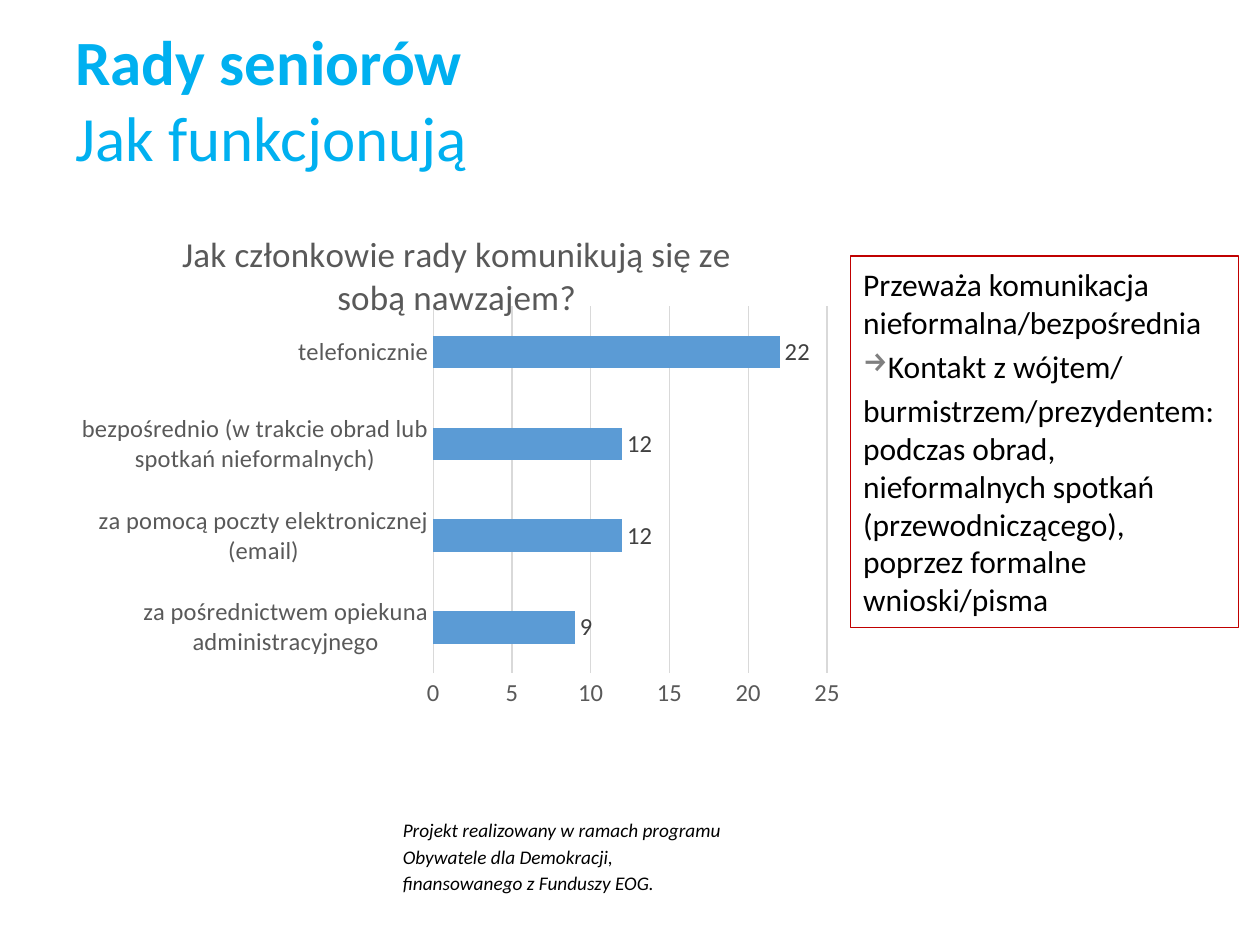
import dataclasses
import typing

import lxml.etree
import pptx
import pptx.chart.data
import pptx.dml.color
import pptx.enum.chart
import pptx.enum.shapes
import pptx.enum.text
import pptx.oxml.ns
import pptx.util

Cm = pptx.util.Cm
Pt = pptx.util.Pt
qn = pptx.oxml.ns.qn

COLORS = {
    "title": "00B0F0",
    "text": "000000",
    "frame": "C00000",
    "arrow": "7F7F7F",
    "axis": "595959",
    "label": "404040",
    "grid": "D9D9D9",
    "bar": "5B9BD5",
}


@dataclasses.dataclass
class Span:
    text: str
    size: float
    color: str = "text"
    bold: bool = False
    italic: bool = False


@dataclasses.dataclass
class Para:
    spans: list[Span]
    bullet: str = ""
    spacing: dict[str, typing.Any] = dataclasses.field(default_factory=dict)


@dataclasses.dataclass
class Panel:
    left: float
    top: float
    width: float
    height: float
    paras: list[Para]
    anchor: typing.Any = pptx.enum.text.MSO_ANCHOR.MIDDLE
    frame: str = ""

    def bounds(self) -> list[pptx.util.Length]:
        return [Cm(value) for value in (self.left, self.top, self.width, self.height)]


def rgb(name: str) -> pptx.dml.color.RGBColor:
    return pptx.dml.color.RGBColor.from_string(COLORS[name])


def assign(target: typing.Any, values: dict[str, typing.Any]) -> None:
    for name, value in values.items():
        setattr(target, name, value)


def style_font(font: typing.Any, size: float, color: str, bold: bool = False, italic: bool = False) -> None:
    assign(font, {"name": "Calibri", "size": Pt(size), "bold": bold, "italic": italic})
    font.color.rgb = rgb(color)


def style_line(line: typing.Any, color: str) -> None:
    line.color.rgb = rgb(color)
    line.width = Pt(0.75)


def add_bullet(para: typing.Any, symbol: str) -> None:
    properties = para._p.get_or_add_pPr()
    assign_indent = {"marL": "0", "indent": "0"}
    for name, value in assign_indent.items():
        properties.set(name, value)
    color = lxml.etree.SubElement(properties, qn("a:buClr"))
    lxml.etree.SubElement(color, qn("a:srgbClr"), val=COLORS["arrow"])
    lxml.etree.SubElement(properties, qn("a:buChar"), char=symbol)


def draw_panel(page: typing.Any, panel: Panel) -> None:
    if panel.frame:
        box = page.shapes.add_shape(pptx.enum.shapes.MSO_SHAPE.RECTANGLE, *panel.bounds())
        box.shadow.inherit = False
        box.fill.background()
        style_line(box.line, panel.frame)
    else:
        box = page.shapes.add_textbox(*panel.bounds())
    frame = box.text_frame
    assign(frame, {"word_wrap": True, "vertical_anchor": panel.anchor})
    for index, item in enumerate(panel.paras):
        para = frame.add_paragraph() if index else frame.paragraphs[0]
        if item.bullet:
            add_bullet(para, item.bullet)
        assign(para, {"alignment": pptx.enum.text.PP_ALIGN.LEFT, **item.spacing})
        for position, span in enumerate(item.spans):
            if position:
                para.add_line_break()
            run = para.add_run()
            run.text = span.text
            style_font(run.font, span.size, span.color, span.bold, span.italic)


def place_plot(chart: typing.Any, place: dict[str, float]) -> None:
    plot_area = chart._chartSpace.chart.plotArea
    for old in plot_area.findall(qn("c:layout")):
        plot_area.remove(old)
    layout = lxml.etree.Element(qn("c:layout"))
    manual = lxml.etree.SubElement(layout, qn("c:manualLayout"))
    settings = {"layoutTarget": "inner", "xMode": "edge", "yMode": "edge", **place}
    for name, value in settings.items():
        lxml.etree.SubElement(manual, qn(f"c:{name}"), val=str(value))
    plot_area.insert(0, layout)


def draw_chart(page: typing.Any, answers: dict[str, int]) -> None:
    data = pptx.chart.data.CategoryChartData(number_format="###0")
    data.categories = list(answers)
    data.add_series("Series 1", list(answers.values()))
    chart = page.shapes.add_chart(
        pptx.enum.chart.XL_CHART_TYPE.BAR_CLUSTERED,
        Cm(1.27), Cm(4.14), Cm(15.88), Cm(10.72), data,
    ).chart
    style_font(chart.font, 10, "text")
    assign(chart, {"has_legend": False, "has_title": True})
    chart.chart_title.include_in_layout = False
    para = chart.chart_title.text_frame.paragraphs[0]
    run = para.add_run()
    run.text = "Jak członkowie rady komunikują się ze sobą nawzajem?"
    style_font(run.font, 20, "axis")

    for axis in (chart.category_axis, chart.value_axis):
        no_tick = pptx.enum.chart.XL_TICK_MARK.NONE
        assign(axis, {"major_tick_mark": no_tick, "minor_tick_mark": no_tick})
        style_font(axis.tick_labels.font, 14, "axis")
    chart.category_axis.has_major_gridlines = False
    style_line(chart.category_axis.format.line, "grid")
    assign(chart.value_axis, {
        "minimum_scale": 0, "maximum_scale": 25, "major_unit": 5, "has_major_gridlines": True,
    })
    chart.value_axis.format.line.fill.background()
    style_line(chart.value_axis.major_gridlines.format.line, "grid")
    number_format = {"number_format": "###0", "number_format_is_linked": False}
    assign(chart.value_axis.tick_labels, number_format)

    plot = chart.plots[0]
    assign(plot, {"gap_width": 182, "vary_by_categories": False})
    bars = plot.series[0]
    bars.format.fill.solid()
    bars.format.fill.fore_color.rgb = rgb("bar")
    labels = bars.data_labels
    assign(labels, {
        **number_format,
        "show_value": True,
        "position": pptx.enum.chart.XL_LABEL_POSITION.OUTSIDE_END,
    })
    style_font(labels.font, 14, "label")
    place_plot(chart, {"x": 0.47, "y": 0.19, "w": 0.5, "h": 0.69})


def main() -> None:
    deck = pptx.Presentation()
    assign(deck, {"slide_width": Cm(25.4), "slide_height": Cm(19.05)})
    page = deck.slides.add_slide(deck.slide_layouts[6])
    gap = {"space_before": Pt(3.6)}
    funding = "Projekt realizowany w ramach programu Obywatele dla Demokracji, finansowanego z Funduszy EOG."
    contact = (
        "burmistrzem/prezydentem: podczas obrad, nieformalnych spotkań "
        "(przewodniczącego), poprzez formalne wnioski/pisma"
    )
    footer = Panel(
        7.87, 16.31, 7.06, 1.88,
        [Para([Span(funding, 11, italic=True)], spacing={"line_spacing": 1.15})],
        anchor=pptx.enum.text.MSO_ANCHOR.TOP,
    )
    title = Panel(1.27, 0.64, 20.83, 2.69, [Para([
        Span("Rady seniorów", 36, "title", bold=True),
        Span("Jak funkcjonują", 36, "title"),
    ])])
    findings = Panel(17.15, 5.16, 7.82, 7.49, [
        Para([Span("Przeważa komunikacja nieformalna/bezpośrednia", 18)]),
        Para([Span("Kontakt z wójtem/", 18)], bullet="→", spacing=gap),
        Para([Span(contact, 18)], spacing=gap),
    ], frame="frame")
    draw_panel(page, footer)
    draw_panel(page, title)
    draw_chart(page, {
        "za pośrednictwem opiekuna administracyjnego": 9,
        "za pomocą poczty elektronicznej (email)": 12,
        "bezpośrednio (w trakcie obrad lub spotkań nieformalnych)": 12,
        "telefonicznie": 22,
    })
    draw_panel(page, findings)
    deck.save("out.pptx")


if __name__ == "__main__":
    main()
